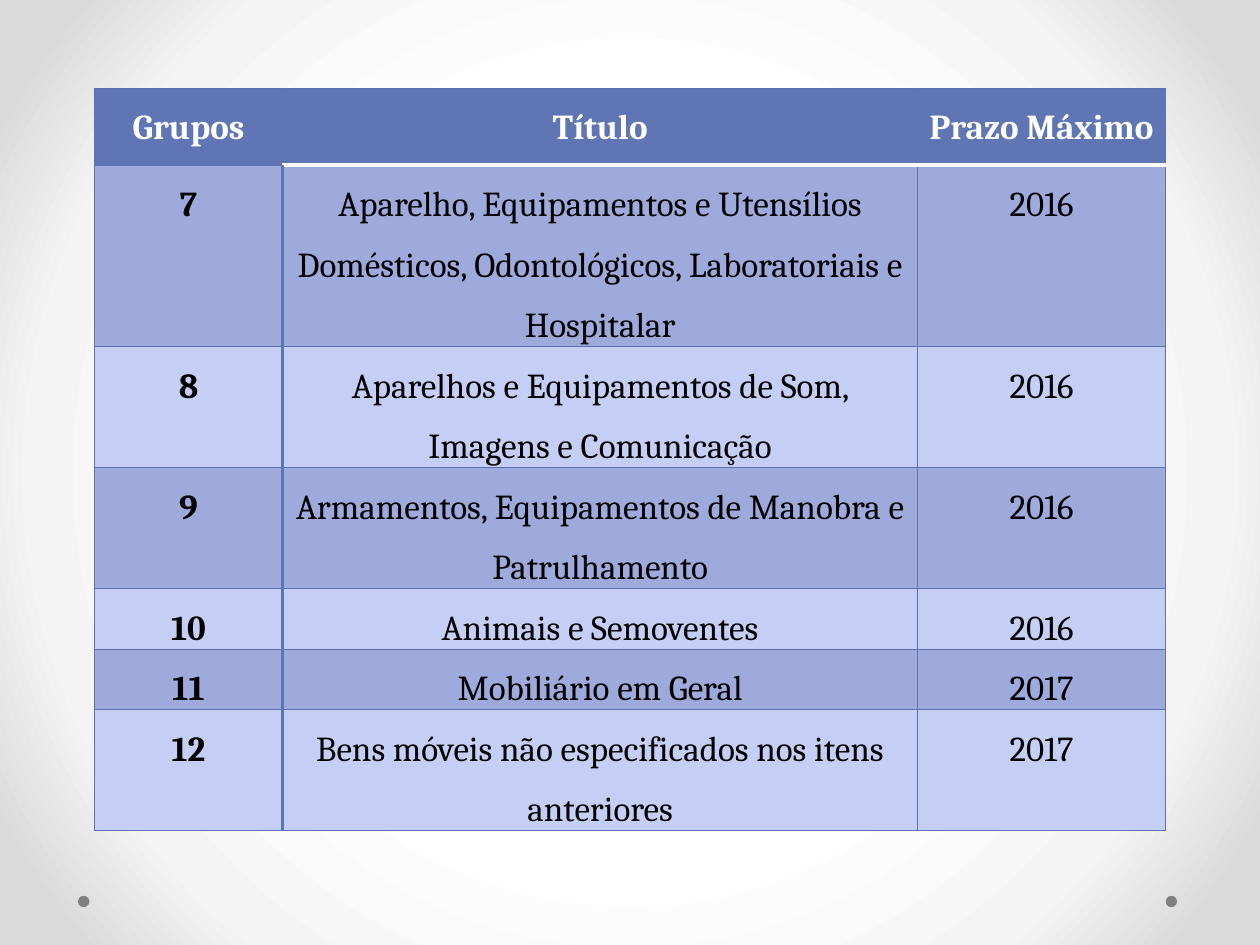
from pptx import Presentation
from pptx.dml.color import RGBColor
from pptx.enum.shapes import MSO_SHAPE
from pptx.enum.text import PP_ALIGN
from pptx.oxml import parse_xml
from pptx.oxml.ns import nsdecls
from pptx.util import Pt

HEADER, BAND, PLAIN = "6076B4", "9DAADB", "C5CFF5"
GRID, WHITE, BLACK, GREY = "5C72B2", "FFFFFF", "000000", "808080"
HEADINGS = ("Grupos", "Título", "Prazo Máximo")
GROUPS = [
    ("7", "Aparelho, Equipamentos e Utensílios Domésticos, Odontológicos, "
          "Laboratoriais e Hospitalar", "2016"),
    ("8", "Aparelhos e Equipamentos de Som, Imagens e Comunicação", "2016"),
    ("9", "Armamentos, Equipamentos de Manobra e Patrulhamento", "2016"),
    ("10", "Animais e Semoventes", "2016"),
    ("11", "Mobiliário em Geral", "2017"),
    ("12", "Bens móveis não especificados nos itens anteriores", "2017"),
]
TITLE_LINES = (3, 2, 2, 1, 1, 2)
COLUMN_WIDTHS = (107.5, 363, 141.5)
HEADER_HEIGHT, LINE_HEIGHT = 44, 34.55


def color(value):
    return RGBColor.from_string(value)


def paint_background(page):
    """Radial gradient, white in the middle and grey at the corners."""
    stops = "".join(
        f'<a:gs pos="{position * 1000}"><a:srgbClr val="{value}"/></a:gs>'
        for position, value in ((50, WHITE), (76, "F4F4F4"), (92, "DADADA")))
    background = parse_xml(
        f'<p:bg {nsdecls("p", "a")}><p:bgPr><a:gradFill rotWithShape="1">'
        f'<a:gsLst>{stops}</a:gsLst><a:path path="circle">'
        '<a:fillToRect l="50000" t="50000" r="50000" b="50000"/></a:path>'
        '</a:gradFill><a:effectLst/></p:bgPr></p:bg>')
    page.element.cSld.insert(0, background)


def add_dots(page, left, top, width, size):
    """One dot at each end of the given strip."""
    for x in (left, left + width - size):
        dot = page.shapes.add_shape(MSO_SHAPE.OVAL, Pt(x), Pt(top), Pt(size), Pt(size))
        dot.shadow.inherit = False
        dot.fill.solid()
        dot.fill.fore_color.rgb = color(GREY)
        dot.line.fill.background()


def set_borders(cell, borders):
    properties = cell._tc.get_or_add_tcPr()
    for side in "LRTB":
        value, width = borders.get(side, (GRID, 0.75))
        properties.append(parse_xml(
            f'<a:ln{side} {nsdecls("a")} w="{Pt(width)}"><a:solidFill>'
            f'<a:srgbClr val="{value}"/></a:solidFill></a:ln{side}>'))


def fill_cell(cell, text, fill, font_color, bold, borders):
    set_borders(cell, borders)
    cell.fill.solid()
    cell.fill.fore_color.rgb = color(fill)
    cell.margin_left = cell.margin_right = Pt(3)
    cell.margin_top = cell.margin_bottom = 0
    cell.text = text
    para = cell.text_frame.paragraphs[0]
    para.alignment = PP_ALIGN.CENTER
    para.line_spacing = 1.5
    para.font.name = "Cambria"
    para.font.size = Pt(20)
    para.font.bold = bold
    para.font.color.rgb = color(font_color)


def add_deadline_table(page, left, top):
    rows = [HEADINGS] + GROUPS
    heights = [HEADER_HEIGHT] + [LINE_HEIGHT * lines for lines in TITLE_LINES]
    table = page.shapes.add_table(
        len(rows), len(HEADINGS), Pt(left), Pt(top),
        Pt(sum(COLUMN_WIDTHS)), Pt(sum(heights))).table
    for column, width in zip(table.columns, COLUMN_WIDTHS):
        column.width = Pt(width)
    for number, (texts, height) in enumerate(zip(rows, heights)):
        table.rows[number].height = Pt(height)
        is_header = number == 0
        fill = HEADER if is_header else BAND if number % 2 else PLAIN
        for index, text in enumerate(texts):
            borders = {}
            # White rule under the header, right of the first column
            if index and number < 2:
                borders["B" if is_header else "T"] = (WHITE, 2.25)
            # Heavy rule between the group numbers and the titles
            if index < 2 and not is_header:
                borders["L" if index else "R"] = (HEADER, 2.25)
            fill_cell(table.cell(number, index), text, fill,
                      WHITE if is_header else BLACK,
                      is_header or index == 0, borders)


def main():
    deck = Presentation()
    deck.slide_width, deck.slide_height = Pt(720), Pt(540)
    page = deck.slides.add_slide(deck.slide_layouts[6])
    paint_background(page)
    add_dots(page, left=44.6, top=511.9, width=628, size=6.5)
    add_deadline_table(page, left=54, top=50.4)
    deck.save("out.pptx")


if __name__ == "__main__":
    main()
